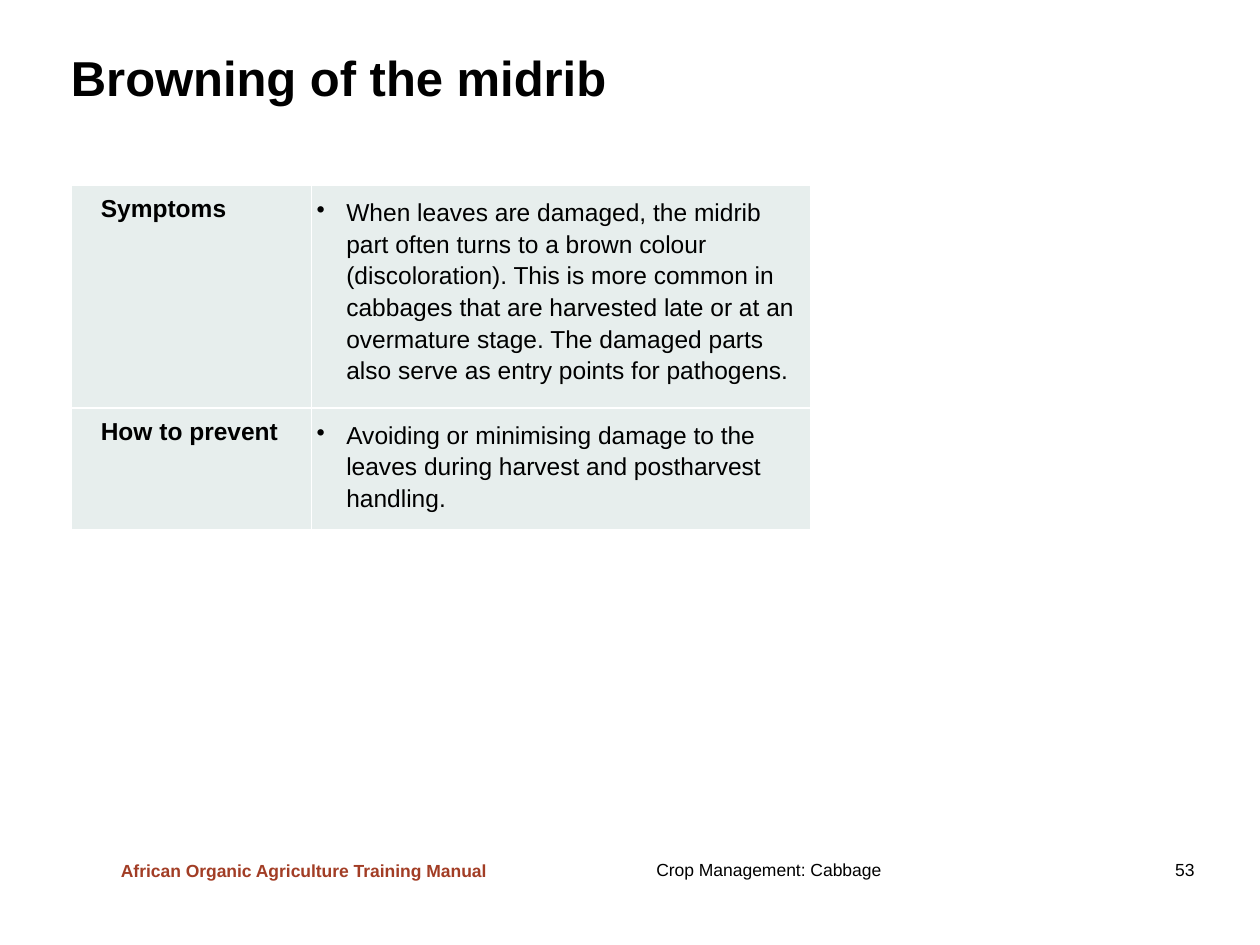
import pptx
import pptx.dml.color
import pptx.enum.text
import pptx.oxml
import pptx.oxml.ns
import pptx.util

Pt = pptx.util.Pt
ALIGN = pptx.enum.text.PP_ALIGN
ANCHOR = pptx.enum.text.MSO_ANCHOR


def colour(value):
    return pptx.dml.color.RGBColor.from_string(value)


class ManualSlide:
    font = "Arial"
    ink = "000000"
    accent = "A23D25"
    cell_fill = "E7EEED"
    border = "FFFFFF"

    def __init__(self, deck):
        self.slide = deck.slides.add_slide(deck.slide_layouts[5])

    def run(self, paragraph, text, size, bold=False, ink=None):
        run = paragraph.add_run()
        run.text = text
        run.font.name = self.font
        run.font.size = Pt(size)
        run.font.bold = bold
        run.font.color.rgb = colour(ink or self.ink)

    def insert(self, paragraph, markup):
        paragraph._p.get_or_add_pPr().append(
            pptx.oxml.parse_xml(markup.format(ns=pptx.oxml.ns.nsdecls("a")))
        )

    def indent(self, paragraph, margin, first=0):
        properties = paragraph._p.get_or_add_pPr()
        properties.set("marL", str(Pt(margin)))
        properties.set("indent", str(Pt(first)))

    def tab(self, paragraph, position, align):
        self.insert(
            paragraph,
            f'<a:tabLst {{ns}}><a:tab pos="{Pt(position)}" algn="{align}"/></a:tabLst>',
        )

    def title(self, text, left, top, width, height):
        title = self.slide.shapes.title
        title.left, title.top = Pt(left), Pt(top)
        title.width, title.height = Pt(width), Pt(height)
        frame = title.text_frame
        frame.margin_left = frame.margin_top = 0
        frame.margin_right, frame.margin_bottom = Pt(7.2), Pt(3.6)
        frame.vertical_anchor = ANCHOR.MIDDLE
        frame.word_wrap = True
        heading = frame.paragraphs[0]
        heading.alignment = ALIGN.LEFT
        self.run(heading, text, 28, True)

    def footer(self, text, left, top, width, height, bold=False, ink=None, tab=None):
        box = self.slide.shapes.add_textbox(Pt(left), Pt(top), Pt(width), Pt(height))
        frame = box.text_frame
        frame.word_wrap = tab is not None
        frame.vertical_anchor = ANCHOR.MIDDLE
        line = frame.paragraphs[0]
        if tab:
            self.tab(line, tab, "r")
        self.run(line, text, 10, bold, ink)

    def cell(self, cell):
        cell.margin_left = cell.margin_right = Pt(2.9)
        cell.margin_top = cell.margin_bottom = Pt(5.75)
        cell.vertical_anchor = ANCHOR.TOP
        cell.fill.solid()
        cell.fill.fore_color.rgb = colour(self.cell_fill)
        for position, side in enumerate(("lnL", "lnR", "lnT", "lnB")):
            cell._tc.get_or_add_tcPr().insert(position, pptx.oxml.parse_xml(
                f'<a:{side} {pptx.oxml.ns.nsdecls("a")} w="{Pt(1)}"><a:solidFill>'
                f'<a:srgbClr val="{self.border}"/></a:solidFill></a:{side}>'
            ))
        return cell.text_frame.paragraphs[0]

    def table(self, entries, left, top, widths, heights):
        table = self.slide.shapes.add_table(
            len(entries), len(widths), Pt(left), Pt(top), Pt(sum(widths)), Pt(sum(heights))
        ).table
        table.first_row = table.horz_banding = False
        for column, width in zip(table.columns, widths):
            column.width = Pt(width)
        for row, height, (topic, advice) in zip(table.rows, heights, entries):
            row.height = Pt(height)
            label, bullet = (self.cell(cell) for cell in row.cells)
            self.indent(label, 14.2)
            self.tab(label, 14.2, "l")
            label.space_after = Pt(3)
            self.run(label, topic, 14, True)
            self.indent(bullet, 17, -17)
            self.insert(bullet, '<a:buChar {ns} char="•"/>')
            bullet.line_spacing = 1.15
            self.run(bullet, advice, 14)


def main():
    deck = pptx.Presentation()
    deck.slide_width, deck.slide_height = Pt(720), Pt(540)
    page = ManualSlide(deck)
    page.footer("Crop Management: Cabbage\t53", 368, 487, 346, 19.5, tab=307.5)
    page.footer("African Organic Agriculture Training Manual", 62, 487.5, 226, 19.5,
                bold=True, ink=page.accent)
    page.title("Browning of the midrib", 40.5, 26, 649.5, 39.5)
    entries = [
        ("Symptoms",
         "When leaves are damaged, the midrib part often turns to a brown colour "
         "(discoloration). This is more common in cabbages that are harvested late "
         "or at an overmature stage. The damaged parts also serve as entry points "
         "for pathogens."),
        ("How to prevent",
         "Avoiding or minimising damage to the leaves during harvest and "
         "postharvest handling."),
    ]
    page.table(entries, 40.5, 105.75, (137.5, 285.25), (119.5, 65.5))
    deck.save("out.pptx")


if __name__ == "__main__":
    main()
